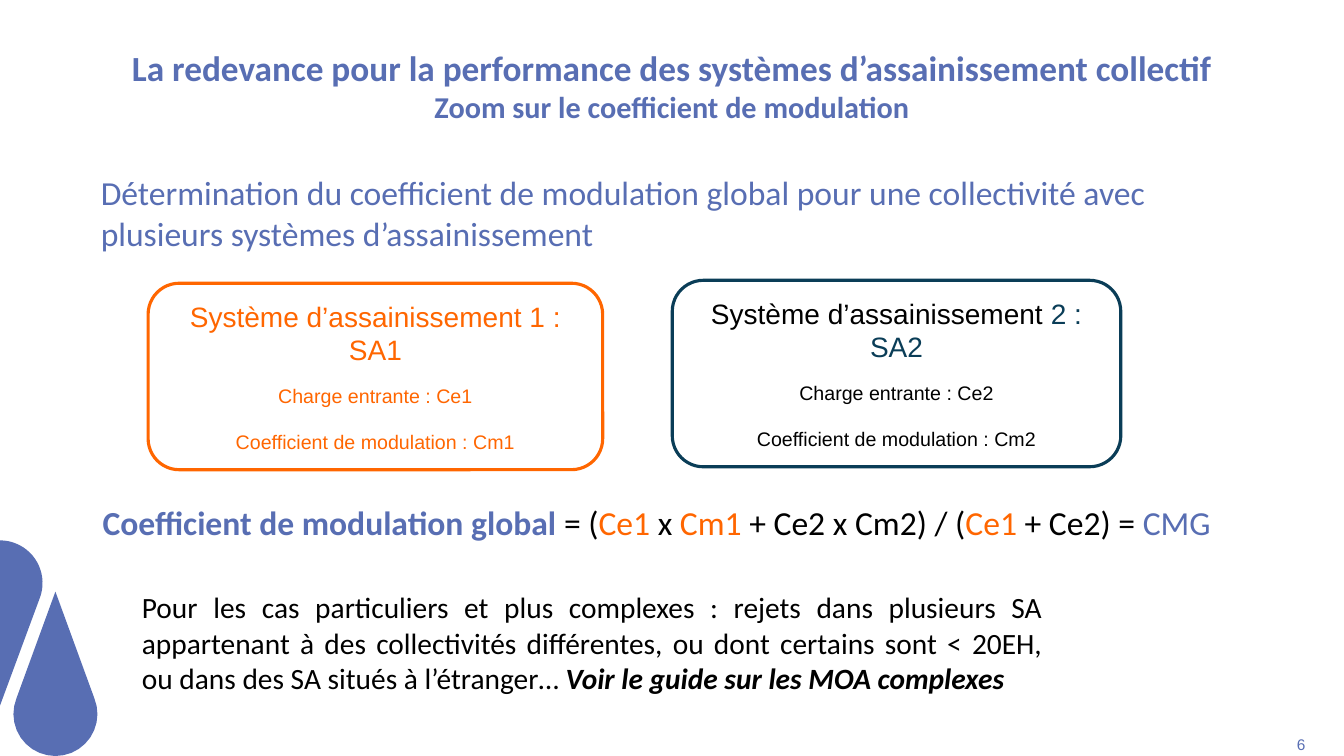
"""Build the slide on the global modulation coefficient."""
import math

from pptx import Presentation
from pptx.dml.color import RGBColor
from pptx.enum import shapes, text
from pptx.util import Pt

BLUE = RGBColor(0x58, 0x6E, 0xB3)
ORANGE = RGBColor(0xFF, 0x66, 0x00)
NAVY = RGBColor(0x0A, 0x3D, 0x57)
BLACK = RGBColor(0, 0, 0)
WHITE = RGBColor(0xFF, 0xFF, 0xFF)
ALIGN = text.PP_ALIGN
MIDDLE = text.MSO_ANCHOR.MIDDLE


def fill_paragraph(paragraph, runs, font, **layout):
    """Write runs of (wording, colour, extra font values) in one paragraph."""
    for name, value in layout.items():
        setattr(paragraph, name, value)
    for wording, colour, extra in runs:
        run = paragraph.add_run()
        run.text = wording.rstrip("\n")
        for name, value in {**font, **extra}.items():
            setattr(run.font, name, value)
        run.font.color.rgb = colour
        if wording.endswith("\n"):
            paragraph.add_line_break()


def set_frame(frame, anchor=text.MSO_ANCHOR.TOP, inset=(7.2, 3.6)):
    """Set wrapping, anchor and insets of a text frame."""
    across, down = map(Pt, inset)
    values = {"word_wrap": True, "vertical_anchor": anchor,
              "margin_left": across, "margin_right": across,
              "margin_top": down, "margin_bottom": down}
    for name, value in values.items():
        setattr(frame, name, value)


def add_text(slide, place, runs, font, align=ALIGN.LEFT, **frame):
    """Add a text box holding one paragraph."""
    box = slide.shapes.add_textbox(*map(Pt, place))
    set_frame(box.text_frame, **frame)
    fill_paragraph(box.text_frame.paragraphs[0], runs, font, alignment=align)


def add_panel(slide, kind, place, line, width):
    """Add an outlined shape without shadow."""
    panel = slide.shapes.add_shape(kind, *map(Pt, place))
    panel.shadow.inherit = False
    panel.fill.solid()
    panel.fill.fore_color.rgb = WHITE
    panel.line.color.rgb = line
    panel.line.width = Pt(width)
    return panel


def add_system(slide, number, place, line, colour):
    """Add the rounded card of one sanitation system."""
    card = add_panel(slide, shapes.MSO_SHAPE.ROUNDED_RECTANGLE, place, line, 2.25)
    frame = card.text_frame
    set_frame(frame, anchor=MIDDLE)
    heading = [("Système d’assainissement ", colour, {}),
               (f"{number} : SA{number}", line, {})]
    rows = [(heading, 20, 0),
            ([(f"Charge entrante : Ce{number}", colour, {})], 14, 12.6),
            ([(f"Coefficient de modulation : Cm{number}", colour, {})], 14, 16)]
    for index, (runs, size, gap) in enumerate(rows):
        paragraph = frame.add_paragraph() if index else frame.paragraphs[0]
        fill_paragraph(paragraph, runs, {"name": "Arial", "size": Pt(size)},
                       alignment=ALIGN.CENTER, space_before=Pt(gap))


def arc(x, y, radius, start, end, steps=20):
    """Return the points of an arc, with angles in degrees."""
    angles = [math.radians(start + (end - start) * i / steps) for i in range(steps + 1)]
    return [(Pt(x + radius * math.cos(a)), Pt(y + radius * math.sin(a))) for a in angles]


def add_drops(slide):
    """Draw the cut-off drop and the whole drop in the lower left corner."""
    half_drop = [(0, Pt(504)), *arc(0, 416.4, 30.4, -90, 20)]
    drop = [(Pt(39.6), Pt(422.6)), *arc(39.6, 510, 30, -22, 202)]
    builder = slide.shapes.build_freeform(*half_drop[0])
    builder.add_line_segments(half_drop[1:])
    builder.move_to(*drop[0])
    builder.add_line_segments(drop[1:])
    drops = builder.convert_to_shape()
    drops.shadow.inherit = False
    drops.fill.solid()
    drops.fill.fore_color.rgb = BLUE
    drops.line.fill.background()


def add_formula(slide):
    """Add the formula of the global coefficient."""
    box = add_panel(slide, shapes.MSO_SHAPE.RECTANGLE, (66.2, 355, 811.4, 32.4), WHITE, 1)
    set_frame(box.text_frame)
    terms = [("Coefficient de modulation global ", BLUE, {"bold": True}),
             ("= (", BLACK, {}), ("Ce1 ", ORANGE, {}), ("x ", BLACK, {}),
             ("Cm1 ", ORANGE, {}), ("+ Ce2 x Cm2) / (", BLACK, {}),
             ("Ce1 ", ORANGE, {}), ("+ Ce2) = ", BLACK, {}), ("CMG", BLUE, {})]
    fill_paragraph(box.text_frame.paragraphs[0], terms,
                   {"name": "Calibri", "size": Pt(24)}, alignment=ALIGN.LEFT)


def main():
    """Build and save the slide."""
    deck = Presentation()
    deck.slide_width, deck.slide_height = Pt(960), Pt(540)
    slide = deck.slides.add_slide(deck.slide_layouts[6])
    add_drops(slide)
    add_text(slide, (48, 21.6, 864, 78.5),
             [("La redevance pour la performance des systèmes d’assainissement collectif\n",
               BLUE, {"size": Pt(25.2)}),
              ("Zoom sur le coefficient de modulation", BLUE, {"size": Pt(21.6)})],
             {"name": "Calibri", "bold": True}, ALIGN.CENTER,
             anchor=MIDDLE, inset=(8.6, 4.3))
    add_text(slide, (72, 123, 816.5, 78.6),
             [("Détermination du coefficient de modulation global pour une collectivité "
               "avec plusieurs systèmes d’assainissement", BLUE, {})],
             {"name": "Calibri", "size": Pt(24)}, inset=(0, 0))
    add_system(slide, 1, (105.8, 202.3, 324.7, 133.2), ORANGE, ORANGE)
    add_system(slide, 2, (480.2, 200.2, 320.4, 133.2), NAVY, BLACK)
    add_formula(slide)
    add_text(slide, (892, 522, 49, 20), [("6", BLUE, {})],
             {"name": "Arial", "size": Pt(11)}, ALIGN.RIGHT,
             anchor=MIDDLE, inset=(8.6, 4.3))
    add_text(slide, (94.3, 417.6, 657.4, 83.5),
             [("Pour les cas particuliers et plus complexes : rejets dans plusieurs SA "
               "appartenant à des collectivités différentes, ou dont certains sont < 20EH, "
               "ou dans des SA situés à l’étranger… ", BLACK, {}),
              ("Voir le guide sur les MOA complexes", BLACK, {"bold": True, "italic": True})],
             {"name": "Calibri", "size": Pt(21)}, ALIGN.JUSTIFY)
    deck.save("out.pptx")


if __name__ == "__main__":
    main()
